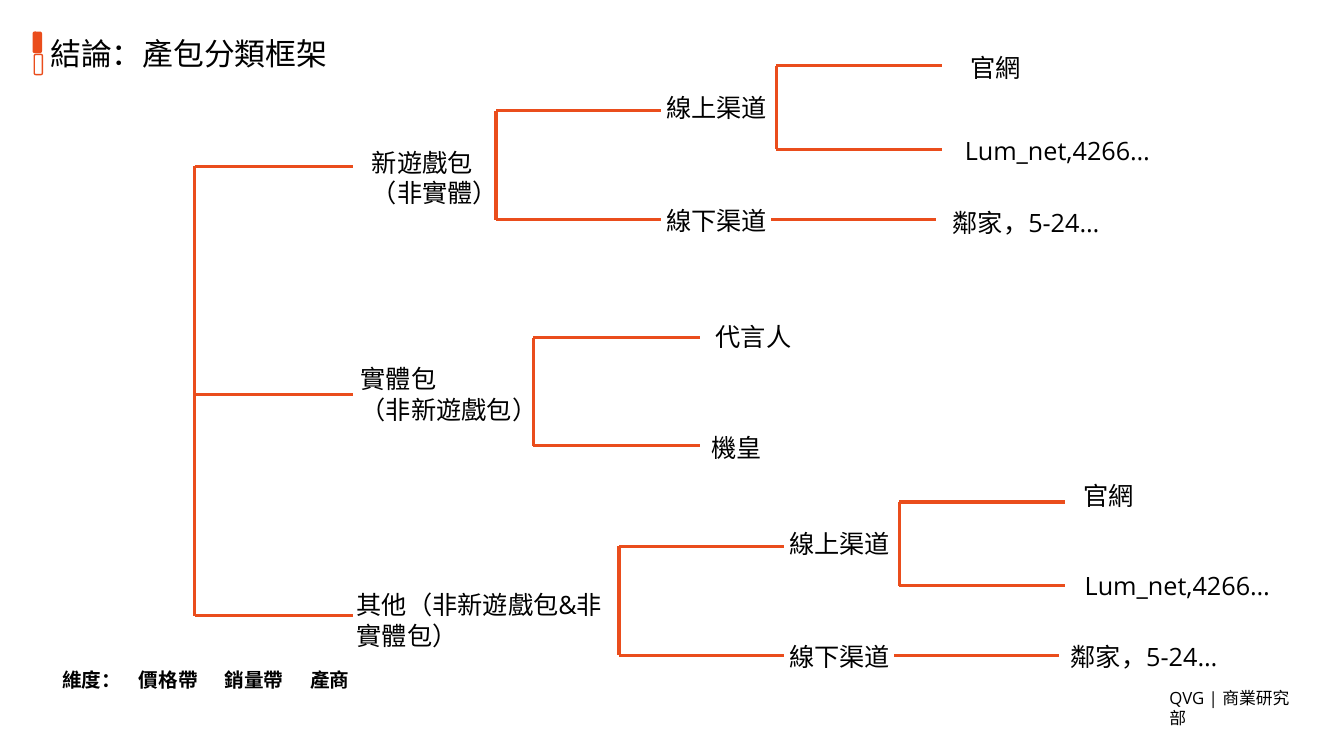
from dataclasses import dataclass

from lxml.etree import SubElement
from pptx import Presentation
from pptx.dml.color import RGBColor
from pptx.enum.shapes import MSO_CONNECTOR, MSO_SHAPE
from pptx.enum.text import MSO_ANCHOR, MSO_AUTO_SIZE, PP_ALIGN
from pptx.oxml.ns import qn
from pptx.slide import Slide
from pptx.text.text import TextFrame
from pptx.util import Inches, Pt

COLORS = {"accent": "EA4D1C", "text": "000000", "paper": "FFFFFF"}
FONT = "Open Sans"
LABEL_WIDTH = 2.68


@dataclass(frozen=True)
class Label:
    text: str
    left: float
    top: float
    width: float = LABEL_WIDTH
    height: float = 0.4
    size: float = 18
    bold: bool = False


@dataclass(frozen=True)
class Bracket:
    """A spine at left with one branch to right at each level."""
    left: float
    right: float
    levels: tuple[float, ...]


@dataclass(frozen=True)
class Marker:
    left: float
    top: float
    fill: str


MARKERS = (Marker(0.33, 0.32, "accent"), Marker(0.34, 0.54, "paper"))

BRACKETS = (
    Bracket(1.93, 3.5, (1.65, 3.91, 6.11)),   # pack types
    Bracket(4.92, 6.56, (1.1, 2.18)),         # new game packs
    Bracket(7.7, 9.34, (0.65, 1.48)),
    Bracket(7.65, 9.28, (2.18,)),
    Bracket(5.29, 6.94, (3.35, 4.42)),        # physical packs
    Bracket(6.14, 7.78, (5.42, 6.5)),         # other packs
    Bracket(8.92, 10.56, (4.98, 5.81)),
    Bracket(8.87, 10.5, (6.5,)),
)

LABELS = (
    # Pack types
    Label("新遊戲包\n（非實體）", 3.59, 1.41, height=0.71),
    Label("實體包\n（非新遊戲包）", 3.48, 3.56, height=0.71),
    Label("其他（非新遊戲包&非實體包）", 3.44, 5.8, height=0.71),
    # New game packs
    Label("線上渠道", 6.51, 0.87),
    Label("線下渠道", 6.51, 1.99),
    Label("官網", 9.53, 0.47),
    Label("Lum_net,4266…", 9.47, 1.29),
    Label("鄰家，5-24…", 9.35, 2.01),
    # Physical packs
    Label("代言人", 7, 3.14),
    Label("機皇", 6.96, 4.24),
    # Other packs
    Label("線上渠道", 7.73, 5.19),
    Label("線下渠道", 7.73, 6.31),
    Label("官網", 10.65, 4.72),
    Label("Lum_net,4266…", 10.66, 5.61),
    Label("鄰家，5-24…", 10.52, 6.31),
    # Footer
    Label("QVG | 商業研究部", 11.5, 6.77, 1.47, 0.3, size=12),
)

DIMENSIONS = Label("維度：\t價格帶\t銷量帶\t產商", 0.52, 6.58, 4.43, 0.34, 14, True)
DIMENSION_TABS = (0.76, 1.61, 2.46)


def format_text(frame: TextFrame, size: float, bold: bool = False) -> None:
    for paragraph in frame.paragraphs:
        paragraph.alignment = PP_ALIGN.LEFT
        paragraph.font.name = FONT
        paragraph.font.size = Pt(size)
        paragraph.font.bold = bold
        paragraph.font.color.rgb = RGBColor.from_string(COLORS["text"])


def add_label(slide: Slide, label: Label, tabs: tuple[float, ...] = ()) -> None:
    frame = slide.shapes.add_textbox(
        Inches(label.left), Inches(label.top), Inches(label.width), Inches(label.height)
    ).text_frame
    frame.word_wrap = True
    frame.text = label.text
    if tabs:
        properties = frame.paragraphs[0]._p.get_or_add_pPr()
        tab_list = SubElement(properties, qn("a:tabLst"))
        for position in tabs:
            SubElement(tab_list, qn("a:tab"), pos=str(Inches(position)), algn="l")
    format_text(frame, label.size, label.bold)


def add_line(slide: Slide, x1: float, y1: float, x2: float, y2: float) -> None:
    line = slide.shapes.add_connector(
        MSO_CONNECTOR.STRAIGHT, Inches(x1), Inches(y1), Inches(x2), Inches(y2)
    )
    line.line.color.rgb = RGBColor.from_string(COLORS["accent"])
    line.line.width = Pt(2.25)
    SubElement(line._element.spPr, qn("a:effectLst"))


def add_bracket(slide: Slide, bracket: Bracket) -> None:
    for level in bracket.levels:
        add_line(slide, bracket.left, level, bracket.right, level)
    if len(bracket.levels) > 1:
        add_line(slide, bracket.left, bracket.levels[0], bracket.left, bracket.levels[-1])


def add_marker(slide: Slide, marker: Marker) -> None:
    bar = slide.shapes.add_shape(
        MSO_SHAPE.ROUNDED_RECTANGLE,
        Inches(marker.left), Inches(marker.top), Inches(0.08), Inches(0.2),
    )
    bar.shadow.inherit = False
    bar.fill.solid()
    bar.fill.fore_color.rgb = RGBColor.from_string(COLORS[marker.fill])
    bar.line.color.rgb = RGBColor.from_string(COLORS["accent"])
    bar.line.width = Pt(1)


def add_title(slide: Slide, text: str) -> None:
    title = slide.shapes.title
    title.left, title.top = Inches(0.4), Inches(0.31)
    title.width, title.height = Inches(12.56), Inches(0.43)
    frame = title.text_frame
    frame.text = text
    frame.auto_size = MSO_AUTO_SIZE.NONE
    frame.vertical_anchor = MSO_ANCHOR.MIDDLE
    format_text(frame, 22)


def main() -> None:
    deck = Presentation()
    deck.slide_width, deck.slide_height = Inches(13.33), Inches(7.5)
    slide = deck.slides.add_slide(deck.slide_layouts[5])

    # Heading
    for marker in MARKERS:
        add_marker(slide, marker)
    add_title(slide, "結論：產包分類框架")

    # Classification tree
    for bracket in BRACKETS:
        add_bracket(slide, bracket)
    for label in LABELS:
        add_label(slide, label)

    # Dimensions
    add_label(slide, DIMENSIONS, DIMENSION_TABS)

    deck.save("out.pptx")


if __name__ == "__main__":
    main()
